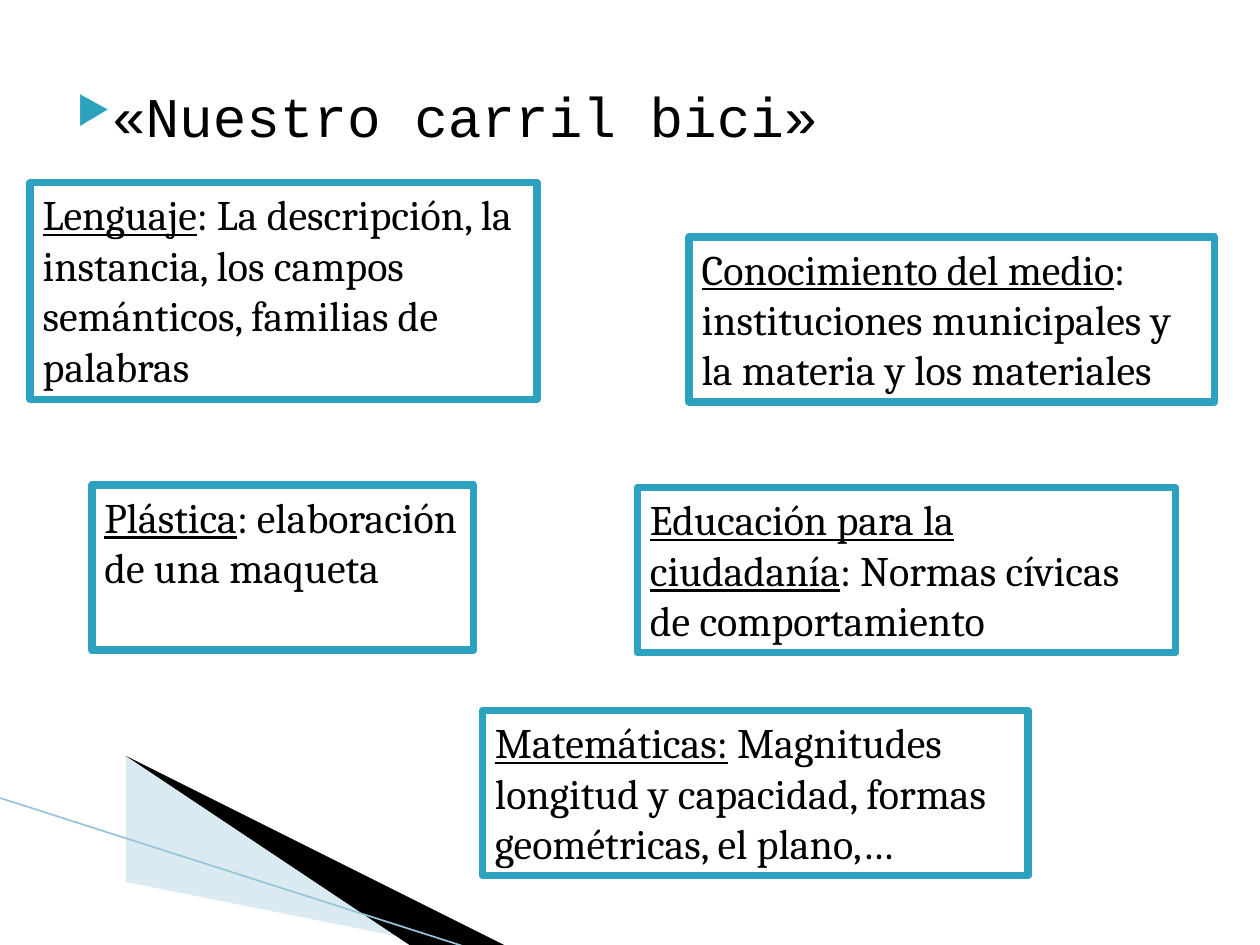
from dataclasses import dataclass

from lxml import etree
from pptx import Presentation
from pptx import util as u
from pptx.dml.color import RGBColor
from pptx.enum import shapes, text
from pptx.oxml import ns


@dataclass(frozen=True)
class Theme:
    teal: str = "2DA2BF"
    pale: str = "A0CBDC"
    edge: str = "97C5D8"
    ink: str = "000000"
    paper: str = "FFFFFF"
    head: str = "Courier New"
    body: str = "Cambria"
    big: float = 32
    mid: float = 24
    thick: float = 4.33
    thin: float = 0.95


def rgb(hex_):
    return RGBColor.from_string(hex_)


def add(node, tag, **attrs):
    return etree.SubElement(node, ns.qn(tag), attrs)


def put(item, values):
    for name, value in values.items():
        setattr(item, name, value)


class Deck:
    def __init__(self, theme, slide):
        self.theme, self.slide = theme, slide

    def style(self, run, font, size, line=False):
        put(run.font, {"name": font, "size": u.Pt(size), "underline": line})
        run.font.color.rgb = rgb(self.theme.ink)

    def frame(self, shape, top=0.05):
        put(shape.text_frame, {
            "word_wrap": True, "auto_size": text.MSO_AUTO_SIZE.NONE,
            "vertical_anchor": text.MSO_ANCHOR.TOP,
            "margin_top": u.Inches(top)})
        return shape.text_frame.paragraphs[0]

    def wedge(self, points, color, alpha=None):
        form = self.slide.shapes.build_freeform(*points[0], scale=u.Inches(1))
        form.add_line_segments(points[1:], close=True)
        shape = form.convert_to_shape()
        shape.shadow.inherit = False
        shape.fill.solid()
        shape.fill.fore_color.rgb = rgb(color)
        shape.line.fill.background()
        if alpha:
            tone = shape.fill._xPr.find(".//" + ns.qn("a:srgbClr"))
            add(tone, "a:alpha", val=str(alpha * 1000))

    def stroke(self, *ends):
        line = self.slide.shapes.add_connector(
            shapes.MSO_CONNECTOR.STRAIGHT, *map(u.Inches, ends))
        line.line.color.rgb = rgb(self.theme.edge)
        line.line.width = u.Pt(self.theme.thin)
        add(line._element.spPr, "a:effectLst")

    def title(self, words, *place):
        box = self.slide.shapes.add_textbox(*map(u.Inches, place))
        para = self.frame(box, 0.13)
        props = para._p.get_or_add_pPr()
        props.set("marL", str(u.Inches(0.4)))
        props.set("indent", str(u.Inches(-0.28)))
        add(add(props, "a:buClr"), "a:srgbClr", val=self.theme.teal)
        add(props, "a:buSzPct", val="68000")
        add(props, "a:buChar", char="▶")
        run = para.add_run()
        run.text = words
        self.style(run, self.theme.head, self.theme.big)

    def card(self, name, words, *place):
        box = self.slide.shapes.add_shape(
            shapes.MSO_SHAPE.RECTANGLE, *map(u.Inches, place))
        box.shadow.inherit = False
        box.fill.solid()
        box.fill.fore_color.rgb = rgb(self.theme.paper)
        box.line.color.rgb = rgb(self.theme.teal)
        box.line.width = u.Pt(self.theme.thick)
        add(box.line._ln, "a:round")
        para = self.frame(box)
        para.alignment = text.PP_ALIGN.LEFT
        for part, line in ((name, True), (words, False)):
            run = para.add_run()
            run.text = part
            self.style(run, self.theme.body, self.theme.mid, line)


def main():
    show = Presentation()
    put(show, {"slide_width": u.Inches(10), "slide_height": u.Inches(7.5)})
    theme = Theme()
    deck = Deck(theme, show.slides.add_slide(show.slide_layouts[6]))

    # Corner wedges
    deck.wedge([(0.55, 6.51), (5.95, 7.51), (4.56, 7.51), (0.55, 6.5)],
               theme.pale, 40)
    deck.wedge([(0.53, 6.49), (4.57, 7.51), (3.72, 7.52), (0.54, 6.5)],
               theme.ink)
    deck.stroke(-0.01, 6.33, 3.71, 7.52)

    # Project title
    deck.title("«Nuestro carril bici»", 0.39, 0.52, 9.22, 0.63)

    # Subject cards
    tall = 1.31
    cards = [
        ("Matemáticas:",
         " Magnitudes longitud y capacidad, formas geométricas, el plano,…",
         3.83, 5.64, 4.33, tall),
        ("Lenguaje",
         ": La descripción, la instancia, los campos semánticos, "
         "familias de palabras", 0.24, 1.45, 4.02, 1.72),
        ("Conocimiento del medio",
         ": instituciones municipales y la materia y los materiales",
         5.47, 1.88, 4.17, tall),
        ("Educación para la ciudadanía",
         ": Normas cívicas de comportamiento", 5.06, 3.87, 4.27, tall),
        ("Plástica", ": elaboración de una maqueta",
         0.73, 3.85, 3.03, tall),
    ]
    for card in cards:
        deck.card(*card)

    show.save("out.pptx")


if __name__ == "__main__":
    main()
